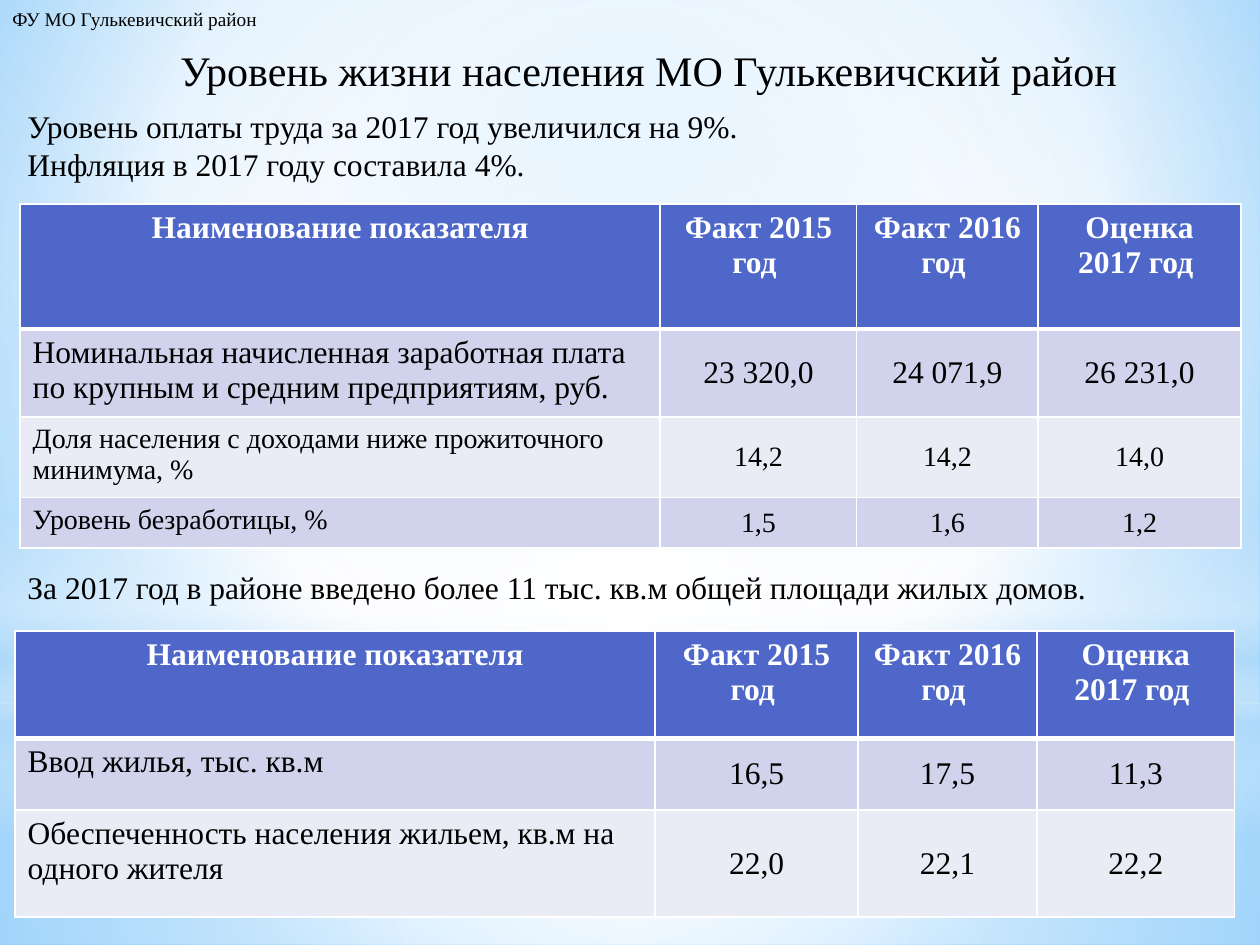
from dataclasses import dataclass
from lxml import etree
from pptx import Presentation, util as u
from pptx.dml.color import RGBColor
from pptx.enum import shapes, text
from pptx.oxml.ns import nsdecls, qn


@dataclass(frozen=True)
class Theme:
    font: str = "Times New Roman"
    ink: str = "000000"
    white: str = "FFFFFF"
    header: str = "4E67C8"
    bands: tuple = ("D0D3EB", "E9EBF5")
    sky: str = "B4DCFA"
    title: int = 24
    body: int = 18
    small: int = 16
    tag: int = 11


THEME = Theme()
WIDTH, HEIGHT = 10, 7.5
LEFT, CENTER, JUSTIFY = text.PP_ALIGN.LEFT, text.PP_ALIGN.CENTER, text.PP_ALIGN.JUSTIFY
CENTRED = (50, 50, 50, 50)

# Content
TITLE = "Уровень жизни населения МО Гулькевичский район"
NOTES = [  # left, top, width, height, size, wrap, alignment, lines
    (0.12, 0.8, 9.76, 0.71, THEME.body, True, JUSTIFY,
     ["Уровень оплаты труда за 2017 год увеличился на 9%.",
      "Инфляция в 2017 году составила 4%. "]),
    (0.12, 4.46, 9.76, 0.4, THEME.body, True, JUSTIFY,
     ["За 2017 год в районе введено более 11 тыс. кв.м общей площади жилых домов. "]),
    (0, 0.01, 2.18, 0.29, THEME.tag, False, LEFT, ["ФУ МО Гулькевичский район"]),
]
HEADINGS = ["Наименование показателя", "Факт 2015 год ", "Факт 2016 год ", "Оценка 2017 год "]
TABLES = [
    {"at": (0.16, 1.62), "cols": (5.08, 1.56, 1.44, 1.61), "head": 0.99,
     "rows": [  # height, size, cells
         (0.7, THEME.body, ["Номинальная начисленная заработная плата по крупным и средним "
                            "предприятиям, руб.", "23 320,0", "24 071,9", "26 231,0"]),
         (0.64, THEME.small, ["Доля населения с доходами ниже прожиточного минимума, %",
                              "14,2", "14,2", "14,0"]),
         (0.4, THEME.small, ["Уровень безработицы, %", "1,5", "1,6", "1,2"])]},
    {"at": (0.12, 5.01), "cols": (5.08, 1.61, 1.42, 1.57), "head": 0.85,
     "rows": [
         (0.57, THEME.body, ["Ввод жилья, тыс. кв.м", "16,5", "17,5", "11,3"]),
         (0.85, THEME.body, ["Обеспеченность населения жильем, кв.м на одного жителя",
                             "22,0", "22,1", "22,2"])]},
]

# Backdrop: gradient stops are position, colour, opacity in percent
W, S = THEME.white, THEME.sky
BACKGROUND = [(0, "9ED5FF", 100), (60, W, 100), (100, "5BB9FF", 100)]
RECT, OVAL = shapes.MSO_SHAPE.RECTANGLE, shapes.MSO_SHAPE.OVAL
GLOWS = [  # shape, top, height, stops, focus (None means top to bottom)
    (RECT, 5.58, 1.92, [(0, W, 91), (37, W, 76), (100, S, 79)], CENTRED),
    (RECT, 0, 5.58, [(0, W, 89), (48, W, 62), (100, S, 79)], CENTRED),
    (RECT, 4.12, 2.5, [(0, W, 0), (29, W, 30), (45, S, 40), (55, W, 26),
                       (65, S, 60), (100, W, 0)], None),
    (OVAL, 1.75, 5.58, [(0, W, 100), (56, W, 0)], CENTRED),
]


def inches(*lengths):
    return [u.Inches(length) for length in lengths]


def apply(target, **values):
    for name, value in values.items():
        setattr(target, name, value)


def paint_gradient(fill, owner, stops, focus):
    fill.gradient()
    old = next(owner.iter(qn("a:gradFill")))
    marks = "".join(
        f'<a:gs pos="{pos * 1000}"><a:srgbClr val="{color}">'
        f'<a:alpha val="{opacity * 1000}"/></a:srgbClr></a:gs>'
        for pos, color, opacity in stops)
    if focus:
        sides = " ".join(f'{side}="{share * 1000}"' for side, share in zip("ltrb", focus))
        course = f'<a:path path="circle"><a:fillToRect {sides}/></a:path>'
    else:
        course = '<a:lin ang="5400000" scaled="0"/>'
    new = etree.fromstring(f'<a:gradFill {nsdecls("a")} rotWithShape="1">'
                           f'<a:gsLst>{marks}</a:gsLst>{course}</a:gradFill>')
    old.getparent().replace(old, new)


def write(frame, lines, size, align, color=THEME.ink, bold=False):
    for index, line in enumerate(lines):
        para = frame.add_paragraph() if index else frame.paragraphs[0]
        para.alignment = align
        span = para.add_run()
        span.text = line
        apply(span.font, name=THEME.font, size=u.Pt(size), bold=bold)
        span.font.color.rgb = RGBColor.from_string(color)


def draw_borders(cell, top, bottom):
    props = cell._tc.get_or_add_tcPr()
    for index, (side, width) in enumerate(zip("LRTB", (1, 1, top, bottom))):
        props.insert(index, etree.fromstring(
            f'<a:ln{side} {nsdecls("a")} w="{u.Pt(width)}"><a:solidFill>'
            f'<a:srgbClr val="{THEME.white}"/></a:solidFill></a:ln{side}>'))


def add_indicator_table(page, at, cols, head, rows):
    grid = [(head, THEME.body, HEADINGS)] + rows
    heights = [row[0] for row in grid]
    table = page.shapes.add_table(len(grid), len(cols),
                                  *inches(*at, sum(cols), sum(heights))).table
    apply(table, first_row=False, horz_banding=False)
    for column, width in zip(table.columns, cols):
        column.width = u.Inches(width)
    for r, (height, size, values) in enumerate(grid):
        table.rows[r].height = u.Inches(height)
        is_head = r == 0
        for c, value in enumerate(values):
            cell = table.cell(r, c)
            cell.fill.solid()
            cell.fill.fore_color.rgb = RGBColor.from_string(
                THEME.header if is_head else THEME.bands[(r - 1) % 2])
            draw_borders(cell, top=3 if r == 1 else 1, bottom=3 if is_head else 1)
            centred = is_head or c > 0
            if centred and not is_head:
                cell.vertical_anchor = text.MSO_ANCHOR.MIDDLE
            write(cell.text_frame, [value], size, CENTER if centred else LEFT,
                  THEME.white if is_head else THEME.ink, is_head)


def main():
    deck = Presentation()
    apply(deck, slide_width=u.Inches(WIDTH), slide_height=u.Inches(HEIGHT))
    page = deck.slides.add_slide(deck.slide_layouts.get_by_name("Title Only"))

    # Backdrop
    paint_gradient(page.background.fill, page.element, BACKGROUND, (20, 10, 20, 60))
    for kind, top, height, stops, focus in GLOWS:
        glow = page.shapes.add_shape(kind, *inches(0, top, WIDTH, height))
        glow.shadow.inherit = False
        glow.line.fill.background()
        paint_gradient(glow.fill, glow.element, stops, focus)

    # Title, raised above the backdrop
    title = page.shapes.title
    page.shapes.element.append(title.element)
    left, top, width, height = inches(1.33, 0.3, 7.72, 0.5)
    apply(title, left=left, top=top, width=width, height=height)
    apply(title.text_frame, word_wrap=False, vertical_anchor=text.MSO_ANCHOR.TOP,
          auto_size=text.MSO_AUTO_SIZE.SHAPE_TO_FIT_TEXT)
    write(title.text_frame, [TITLE], THEME.title, LEFT)

    # Notes and tables
    for left, top, width, height, size, wrap, align, lines in NOTES:
        box = page.shapes.add_textbox(*inches(left, top, width, height))
        apply(box.text_frame, word_wrap=wrap, auto_size=text.MSO_AUTO_SIZE.SHAPE_TO_FIT_TEXT)
        write(box.text_frame, lines, size, align)
    for table in TABLES:
        add_indicator_table(page, **table)

    deck.save("out.pptx")


if __name__ == "__main__":
    main()
